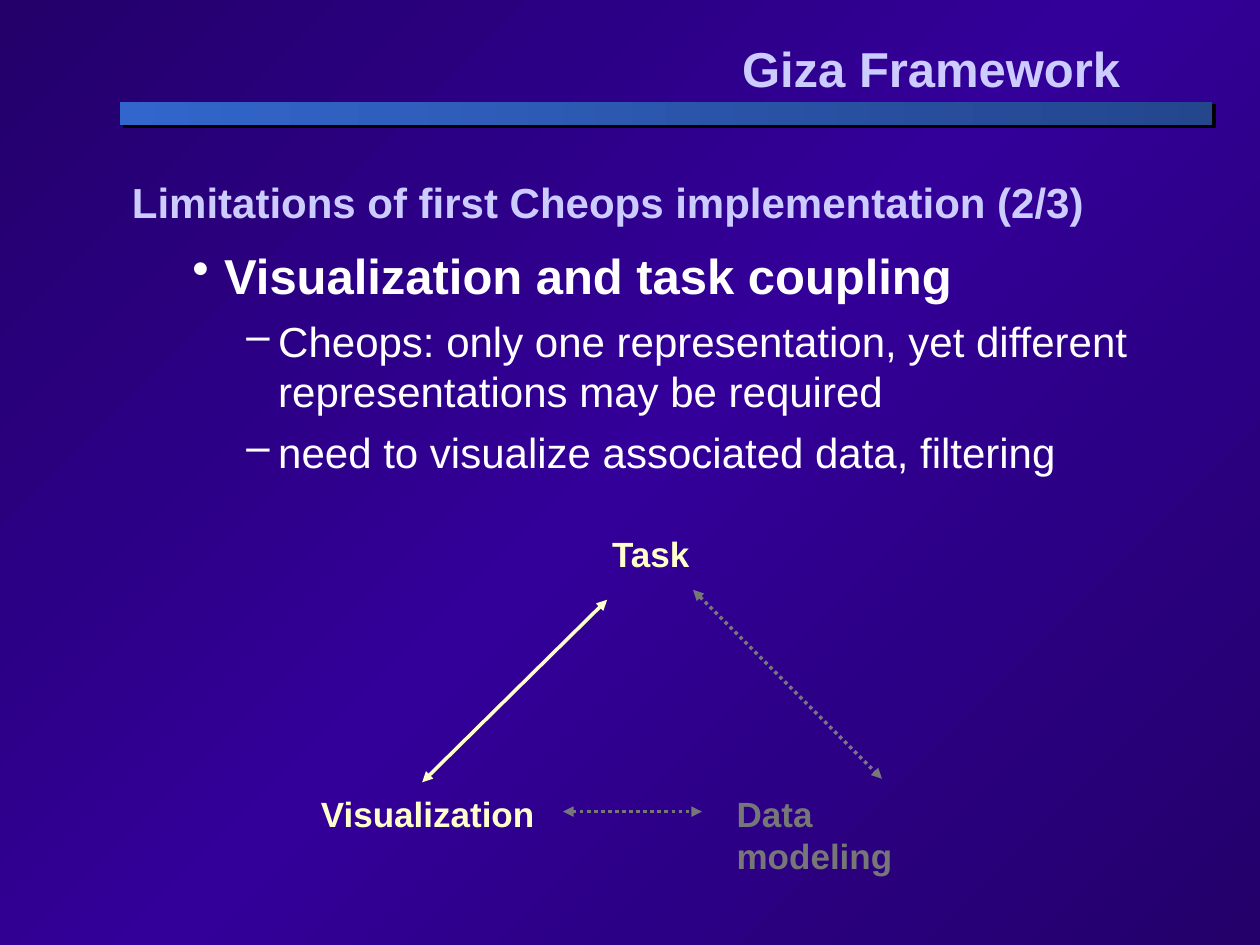
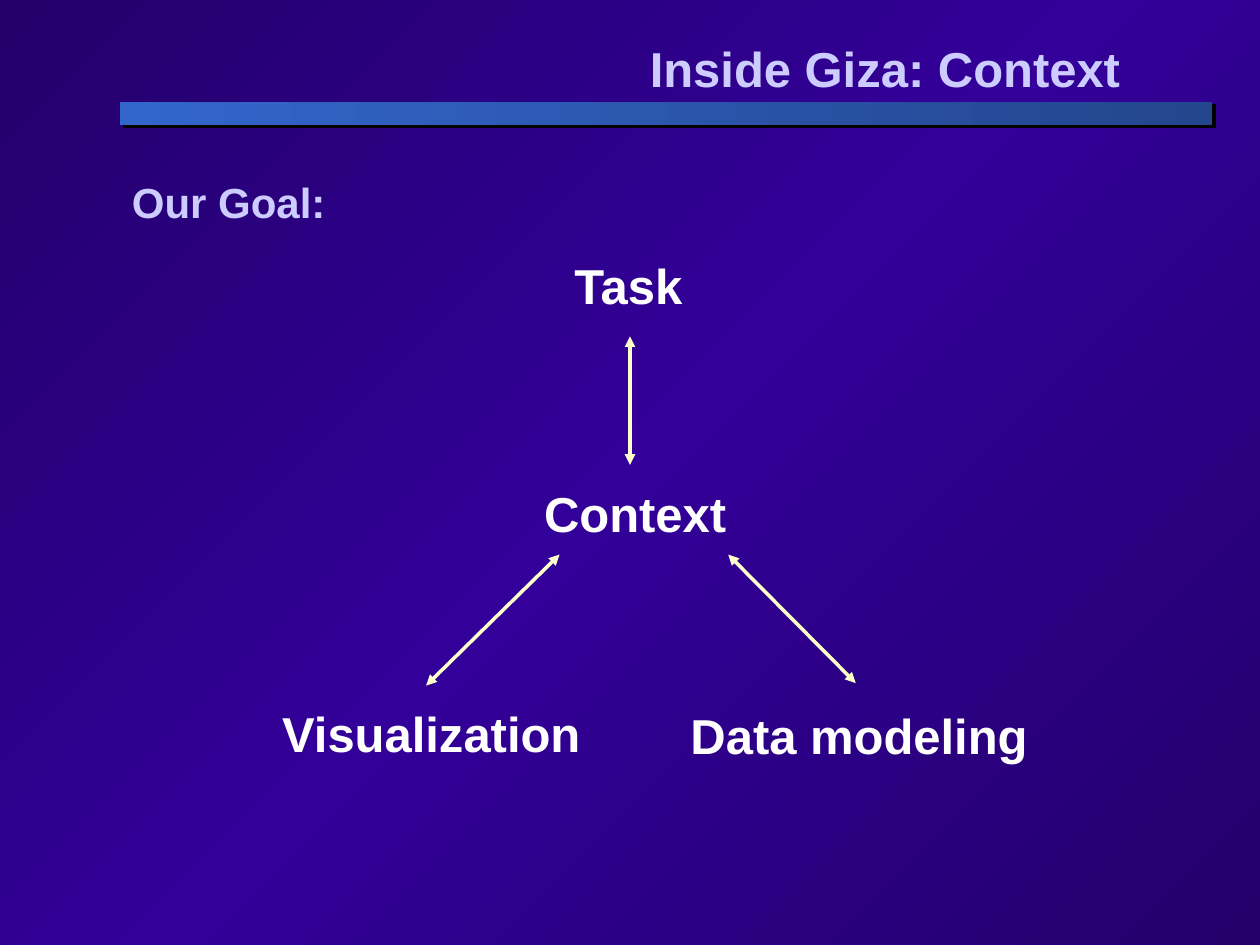
from dataclasses import dataclass

from lxml import etree
from pptx import Presentation
from pptx import util as u
from pptx.dml.color import RGBColor
from pptx.enum import dml, shapes, text
from pptx.oxml import ns


@dataclass(frozen=True)
class Theme:
    font: str = "Arial"
    night: str = "23006A"
    violet: str = "330099"
    navy: str = "23468D"
    blue: str = "3366CC"
    black: str = "000000"
    white: str = "FFFFFF"
    lavender: str = "CCCCFF"
    cream: str = "FFFFCC"
    grey: str = "777777"
    large: int = 28
    medium: int = 24
    small: int = 20
    stroke: int = 2


@dataclass(frozen=True)
class Box:
    left: float
    top: float
    width: float
    height: float

    def inner(self, left, top, width, height):
        return Box(self.left + left, self.top + top, width, height)

    def point(self, x, y):
        return u.Cm(self.left + x), u.Cm(self.top + y)

    def lengths(self):
        return [u.Cm(n) for n in (self.left, self.top, self.width, self.height)]


THEME = Theme()
BAND = Box(2.41, 2.06, 22.02, 0.46)
TITLE_RIGHT = 22.83


def paint_gradient(fill, owner, stops, angle):
    fill.gradient()
    fill.gradient_angle = 360 - angle
    stop_list = owner.find(".//" + ns.qn("a:gsLst"))
    stop_list.clear()
    for percent, color in stops:
        stop = etree.SubElement(stop_list, ns.qn("a:gs"), pos=str(percent * 1000))
        etree.SubElement(stop, ns.qn("a:srgbClr"), val=color)


def style_font(font, size, color, bold=True):
    for name, value in dict(name=THEME.font, size=u.Pt(size), bold=bold).items():
        setattr(font, name, value)
    font.color.rgb = RGBColor.from_string(color)


def add_frame(slide, box, **settings):
    frame = slide.shapes.add_textbox(*box.lengths()).text_frame
    for name, value in {"word_wrap": True, **settings}.items():
        setattr(frame, name, value)
    return frame


def add_label(slide, box, words, size, color):
    frame = add_frame(slide, box, word_wrap=False,
                      auto_size=text.MSO_AUTO_SIZE.SHAPE_TO_FIT_TEXT)
    label = frame.paragraphs[0]
    label.text = words
    style_font(label.font, size, color)


def add_arrow(slide, box, start, end, color, dotted=False):
    arrow = slide.shapes.add_connector(
        shapes.MSO_CONNECTOR.STRAIGHT, *box.point(*start), *box.point(*end))
    arrow.line.width = u.Pt(THEME.stroke)
    arrow.line.color.rgb = RGBColor.from_string(color)
    if dotted:
        arrow.line.dash_style = dml.MSO_LINE.ROUND_DOT
    for end_tag in ("a:headEnd", "a:tailEnd"):
        etree.SubElement(arrow.line._get_or_add_ln(), ns.qn(end_tag), type="triangle")
    etree.SubElement(arrow._element.spPr, ns.qn("a:effectLst"))


def add_band(slide, box):
    shade, bar = [
        slide.shapes.add_shape(shapes.MSO_SHAPE.RECTANGLE, *place.lengths())
        for place in (box.inner(0.08, 0.05, box.width - 0.02, box.height), box)]
    for strip in (shade, bar):
        strip.shadow.inherit = False
    shade.fill.solid()
    shade.fill.fore_color.rgb = RGBColor.from_string(THEME.black)
    shade.line.color.rgb = RGBColor.from_string(THEME.black)
    shade.line.width = u.Pt(1)
    paint_gradient(bar.fill, bar._element,
                   [(0, THEME.navy), (100, THEME.blue)], 180)
    bar.line.fill.background()


def add_title(slide, box, words):
    frame = add_frame(slide, box, vertical_anchor=text.MSO_ANCHOR.MIDDLE)
    title = frame.paragraphs[0]
    title.text = words
    title.alignment = text.PP_ALIGN.RIGHT
    style_font(title.font, THEME.large, THEME.lavender)


def add_points(slide, box, points):
    levels = {
        1: dict(mark="•", margin=1.12, size=THEME.large, bold=True),
        2: dict(mark="–", margin=2.21, size=THEME.medium, bold=False),
    }
    frame = add_frame(slide, box)
    for index, (level, words) in enumerate(points):
        look = levels[level]
        point = frame.add_paragraph() if index else frame.paragraphs[0]
        point.text = words
        point.level = level
        if index:
            point.space_before = u.Pt(6)
        properties = point._p.get_or_add_pPr()
        properties.set("marL", str(u.Cm(look["margin"])))
        properties.set("indent", str(u.Cm(-0.64)))
        mark_color = etree.SubElement(properties, ns.qn("a:buClr"))
        etree.SubElement(mark_color, ns.qn("a:srgbClr"), val=THEME.white)
        etree.SubElement(properties, ns.qn("a:buChar"), char=look["mark"])
        style_font(point.font, look["size"], THEME.white, look["bold"])


def add_coupling(slide, box):
    for words, left, top, width, color in [
        ("Task", 5.87, 0, 2.11, THEME.cream),
        ("Visualization", 0, 5.23, 4.83, THEME.cream),
        ("Data modeling", 8.38, 5.23, 5.36, THEME.grey),
    ]:
        add_label(slide, box.inner(left, top, width, 1.09), words, THEME.small, color)
    add_arrow(slide, box, (6.02, 1.47), (2.29, 5.15), THEME.cream)
    for start, end in [((7.75, 1.27), (11.56, 5.08)), ((5.13, 5.74), (7.93, 5.74))]:
        add_arrow(slide, box, start, end, THEME.grey, dotted=True)


def add_context(slide, box):
    for words, left, top, width in [
        ("Task", 5.89, 0, 2.77),
        ("Context", 5.28, 4.6, 4.19),
        ("Visualization", 0, 9.02, 6.55),
        ("Data modeling", 8.23, 9.07, 7.32),
    ]:
        add_label(slide, box.inner(left, top, width, 1.42), words,
                  THEME.large, THEME.white)
    for start, end in [
        ((7.26, 1.75), (7.26, 4.34)),
        ((5.84, 6.15), (3.15, 8.79)),
        ((9.24, 6.15), (11.81, 8.74)),
    ]:
        add_arrow(slide, box, start, end, THEME.cream)


def add_page(deck, title, title_left, heading, heading_width):
    slide = deck.slides.add_slide(deck.slide_layouts[6])
    add_band(slide, BAND)
    add_title(slide, Box(title_left, 0.84, TITLE_RIGHT - title_left, 1.07), title)
    add_label(slide, Box(BAND.left, 3.43, heading_width, 1.27), heading,
              THEME.medium, THEME.lavender)
    return slide


def main():
    deck = Presentation()
    deck.slide_width, deck.slide_height = u.Cm(25.4), u.Cm(19.05)
    master = deck.slide_master
    paint_gradient(master.background.fill, master._element,
                   [(0, THEME.night), (50, THEME.violet), (100, THEME.night)], 225)

    framework = add_page(deck, "Giza Framework", 2.54,
                         "Limitations of first Cheops implementation (2/3)", 19.71)
    add_points(framework, Box(3.15, 4.83, 21.62, 11.13), [
        (1, "Visualization and task coupling"),
        (2, "Cheops: only one representation, yet different "
            "representations may be required"),
        (2, "need to visualize associated data, filtering"),
    ])
    add_coupling(framework, Box(6.22, 10.62, 13.74, 6.33))

    inside = add_page(deck, "Inside Giza: Context", 2.82, "Our Goal:", 4.42)
    add_context(inside, Box(5.44, 5.03, 15.54, 10.49))

    deck.save("out.pptx")


if __name__ == "__main__":
    main()
